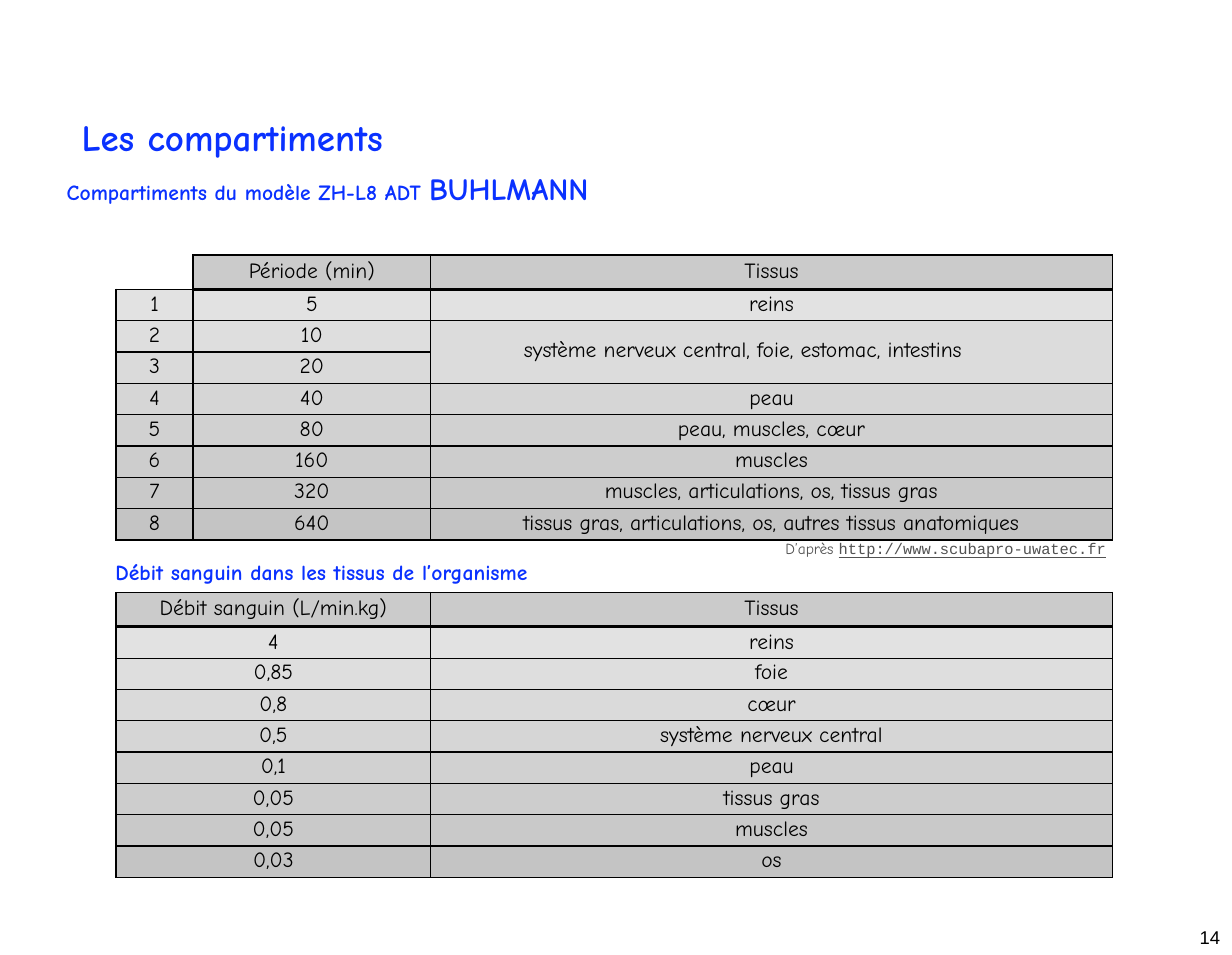
"""Builds the slide on tissue compartments and blood flow."""
from dataclasses import dataclass

from lxml.etree import SubElement
from pptx import Presentation
from pptx.dml.color import RGBColor
from pptx.enum.text import MSO_AUTO_SIZE, PP_ALIGN
from pptx.oxml.ns import qn
from pptx.util import Pt


@dataclass(frozen=True)
class Theme:
    """Holds the colours, fonts and type sizes of the slide."""

    black: str = "000000"
    blue: str = "0A31FF"
    grey: str = "515151"
    header_fill: str = "CBCBCB"
    merged_fill: str = "DCDCDC"
    row_fills: tuple = ("E2E2E2", "DEDEDE", "DADADA", "D6D6D6",
                        "D1D1D1", "CDCDCD", "C9C9C9", "C4C4C4")
    body_font: str = "Comic Neue"
    link_font: str = "Courier New"
    number_font: str = "Arial"
    title_size: float = 24
    name_size: float = 20
    body_size: float = 14
    number_size: float = 12
    source_size: float = 10
    thin_line: float = 1
    thick_line: float = 2.25
    plain_table: str = "{2D5ABB26-0587-4C30-8999-92F81FD0307C}"


THEME = Theme()
TABLE_LEFT = 75.35
HEADER_HEIGHT = 22.4
ROW_HEIGHT = 20.33
LABEL_WIDTH, PERIOD_WIDTH, TISSUE_WIDTH = 50, 154.4, 442.6

COMPARTMENTS = [
    ("", "Période (min)", "Tissus"),
    ("1", "5", "reins"),
    ("2", "10", "système nerveux central, foie, estomac, intestins"),
    ("3", "20", ""),
    ("4", "40", "peau"),
    ("5", "80", "peau, muscles, cœur"),
    ("6", "160", "muscles"),
    ("7", "320", "muscles, articulations, os, tissus gras"),
    ("8", "640", "tissus gras, articulations, os, autres tissus anatomiques"),
]
BLOOD_FLOW = [
    ("Débit sanguin (L/min.kg)", "Tissus"),
    ("4", "reins"),
    ("0,85", "foie"),
    ("0,8", "cœur"),
    ("0,5", "système nerveux central"),
    ("0,1", "peau"),
    ("0,05", "tissus gras"),
    ("0,05", "muscles"),
    ("0,03", "os"),
]


def style_span(span, size, color, font=THEME.body_font, bold=False):
    """Set the type of one run."""
    span.font.name = font
    span.font.size = Pt(size)
    span.font.bold = bold
    span.font.color.rgb = RGBColor.from_string(color)


def add_text(page, left, top, width, height, text, inset_left=1, inset_top=1):
    """Add a text box with one paragraph and return the paragraph."""
    box = page.shapes.add_textbox(Pt(left), Pt(top), Pt(width), Pt(height))
    frame = box.text_frame
    frame.word_wrap = True
    frame.auto_size = MSO_AUTO_SIZE.SHAPE_TO_FIT_TEXT
    frame.margin_left, frame.margin_top = Pt(inset_left), Pt(inset_top)
    frame.margin_right = frame.margin_bottom = 0
    frame.text = text
    return frame.paragraphs[0]


def add_heading(page, left, top, width, height, text, size, inset_top=1):
    """Add a bold blue heading and return its paragraph."""
    para = add_text(page, left, top, width, height, text, inset_top=inset_top)
    style_span(para.runs[0], size, THEME.blue, bold=True)
    return para


def set_borders(cell, weights):
    """Draw black lines on the given sides, in the order L, R, T, B."""
    properties = cell._tc.get_or_add_tcPr()
    for side, weight in weights.items():
        line = SubElement(properties, qn(f"a:ln{side}"), w=str(Pt(weight)))
        fill = SubElement(line, qn("a:solidFill"))
        SubElement(fill, qn("a:srgbClr"), val=THEME.black)


def fill_cell(cell, text, row, color):
    """Write a centred cell with its borders and its fill."""
    cell.margin_left = cell.margin_right = cell.margin_bottom = 0
    cell.margin_top = Pt({0: 2.5, 1: 2}.get(row, 1.5))
    weights = dict.fromkeys("LRTB", THEME.thin_line)
    if row == 0:
        weights["B"] = THEME.thick_line
    elif row == 1:
        weights["T"] = THEME.thick_line
    set_borders(cell, weights)
    cell.fill.solid()
    cell.fill.fore_color.rgb = RGBColor.from_string(color)
    cell.text_frame.text = text
    para = cell.text_frame.paragraphs[0]
    para.alignment = PP_ALIGN.CENTER
    for span in para.runs:
        style_span(span, THEME.body_size, THEME.black)


def clear_corner(cell):
    """Leave a corner cell open on its outer sides."""
    cell.margin_left = cell.margin_right = 0
    cell.margin_top = cell.margin_bottom = 0
    set_borders(cell, dict.fromkeys("RB", THEME.thin_line))
    cell.fill.background()


def add_grid(page, top, widths, rows):
    """Add a table whose rows darken downwards and return it."""
    height = HEADER_HEIGHT + ROW_HEIGHT * (len(rows) - 1)
    frame = page.shapes.add_table(len(rows), len(widths), Pt(TABLE_LEFT),
                                  Pt(top), Pt(sum(widths)), Pt(height))
    table = frame.table
    table.first_row = table.horz_banding = False
    table._tbl.tblPr.find(qn("a:tableStyleId")).text = THEME.plain_table
    for column, width in zip(table.columns, widths):
        column.width = Pt(width)
    fills = (THEME.header_fill, *THEME.row_fills)
    for row, (texts, color) in enumerate(zip(rows, fills)):
        table.rows[row].height = Pt(ROW_HEIGHT if row else HEADER_HEIGHT)
        for column, text in enumerate(texts):
            cell = table.cell(row, column)
            if row == 0 and not text:
                clear_corner(cell)
                continue
            weight_row = 2 if row == 1 and not rows[0][column] else row
            fill_cell(cell, text, weight_row, color)
    return table


def merge_tissue(table):
    """Join the tissue cells of compartments 2 and 3."""
    cell = table.cell(2, 2)
    cell.merge(table.cell(3, 2))
    cell.margin_left, cell.margin_top = Pt(60.5), Pt(11.5)
    cell.fill.fore_color.rgb = RGBColor.from_string(THEME.merged_fill)
    cell.text_frame.paragraphs[0].alignment = PP_ALIGN.LEFT


def add_source(page):
    """Add the source line under the first table."""
    para = add_text(page, 509, 349.2, 214, 13.7, "D’après ")
    style_span(para.runs[0], THEME.source_size, THEME.grey)
    address = para.add_run()
    address.text = "http://www.scubapro-uwatec.fr"
    style_span(address, THEME.source_size, THEME.grey, THEME.link_font)
    address.font.underline = True


def add_page_number(page):
    """Add the page number in the lower right corner."""
    para = add_text(page, 777, 602.6, 18, 13.7, "14", 2, 0)
    para.line_spacing = Pt(12.7)
    style_span(para.runs[0], THEME.number_size, THEME.black, THEME.number_font)


def main():
    """Build the slide and save it."""
    deck = Presentation()
    deck.slide_width, deck.slide_height = Pt(800), Pt(620)
    page = deck.slides.add_slide(deck.slide_layouts[6])
    add_page_number(page)
    add_heading(page, 52, 73.4, 218, 31, "Les compartiments", THEME.title_size)
    periods = (LABEL_WIDTH, PERIOD_WIDTH, TISSUE_WIDTH)
    merge_tissue(add_grid(page, 165.5, periods, COMPARTMENTS))
    add_source(page)
    flows = (LABEL_WIDTH + PERIOD_WIDTH, TISSUE_WIDTH)
    add_grid(page, 384.6, flows, BLOOD_FLOW)
    add_heading(page, 74, 362.2, 299, 18.7,
                "Débit sanguin dans les tissus de l’organisme", THEME.body_size)
    para = add_heading(page, 42.3, 105.8, 705, 28.8,
                       "Compartiments du modèle ZH-L8 ADT ", THEME.body_size, 4.4)
    name = para.add_run()
    name.text = "BUHLMANN"
    style_span(name, THEME.name_size, THEME.blue, bold=True)
    deck.save("out.pptx")


if __name__ == "__main__":
    main()
